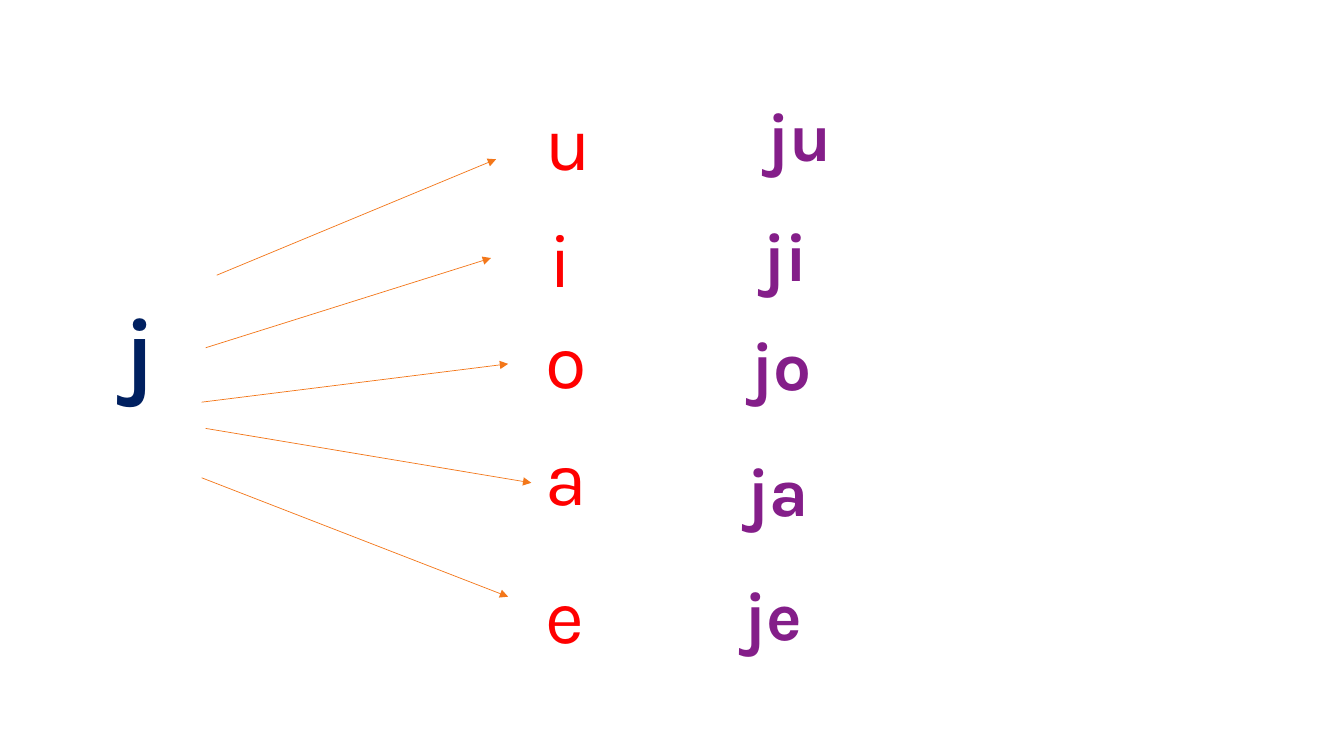
from lxml import etree
from pptx import Presentation
from pptx.dml.color import RGBColor
from pptx.enum.shapes import MSO_CONNECTOR
from pptx.enum.text import MSO_AUTO_SIZE, PP_ALIGN
from pptx.oxml.ns import qn
from pptx.util import Inches, Pt

STRAIGHT = MSO_CONNECTOR.STRAIGHT
FIT_SHAPE = MSO_AUTO_SIZE.SHAPE_TO_FIT_TEXT
LEFT, CENTER = PP_ALIGN.LEFT, PP_ALIGN.CENTER
NAVY, RED, PURPLE, ORANGE = "002060", "FF0000", "841E89", "F3771A"

prs = Presentation()
prs.slide_width, prs.slide_height = Inches(13.33), Inches(7.5)
slide = prs.slides.add_slide(prs.slide_layouts[6])


def add_letters(text, box, size, color, bold, align):
    frame = slide.shapes.add_textbox(*map(Inches, box)).text_frame
    frame.word_wrap = True
    frame.auto_size = FIT_SHAPE
    frame.text = text
    paragraph = frame.paragraphs[0]
    paragraph.alignment = align
    font = paragraph.runs[0].font
    font.name, font.size, font.bold = "Karla", Pt(size), bold
    font.color.rgb = RGBColor.from_string(color)


# Consonant
consonant = "j"
add_letters(consonant, (0.62, 2.85, 1.54, 1.21), 66, NAVY, True, CENTER)

# Vowel, its left and top, arrow start and end, syllable left, top and width
rows = [
    ("u", (5.31, 0.89), (2.15, 2.73), (4.92, 1.58), (7.45, 0.89, 0.96)),
    ("i", (5.35, 2.05), (2.04, 3.45), (4.87, 2.56), (7.23, 2.08, 1.12)),
    ("o", (5.31, 3.05), (2.00, 3.99), (5.04, 3.61), (7.27, 3.16, 0.96)),
    ("a", (5.31, 4.22), (2.04, 4.25), (5.27, 4.79), (7.24, 4.41, 0.96)),
    ("e", (5.31, 5.58), (2.00, 4.74), (5.04, 5.92), (7.19, 5.64, 0.96)),
]

for vowel, vowel_at, start, end, syllable_at in rows:
    # Vowel and the syllable it forms
    add_letters(vowel, (*vowel_at, 0.7, 1.01), 54, RED, False, LEFT)
    add_letters(consonant + vowel, (*syllable_at, 0.91), 48, PURPLE, True, CENTER)

    # Arrow from the consonant to the vowel
    arrow = slide.shapes.add_connector(STRAIGHT, *map(Inches, start + end))
    arrow.line.color.rgb = RGBColor.from_string(ORANGE)
    arrow.line.width = Pt(0.5)
    line_xml = arrow.line._get_or_add_ln()
    etree.SubElement(line_xml, qn("a:tailEnd"), type="triangle")
    etree.SubElement(line_xml.getparent(), qn("a:effectLst"))

prs.save("out.pptx")
